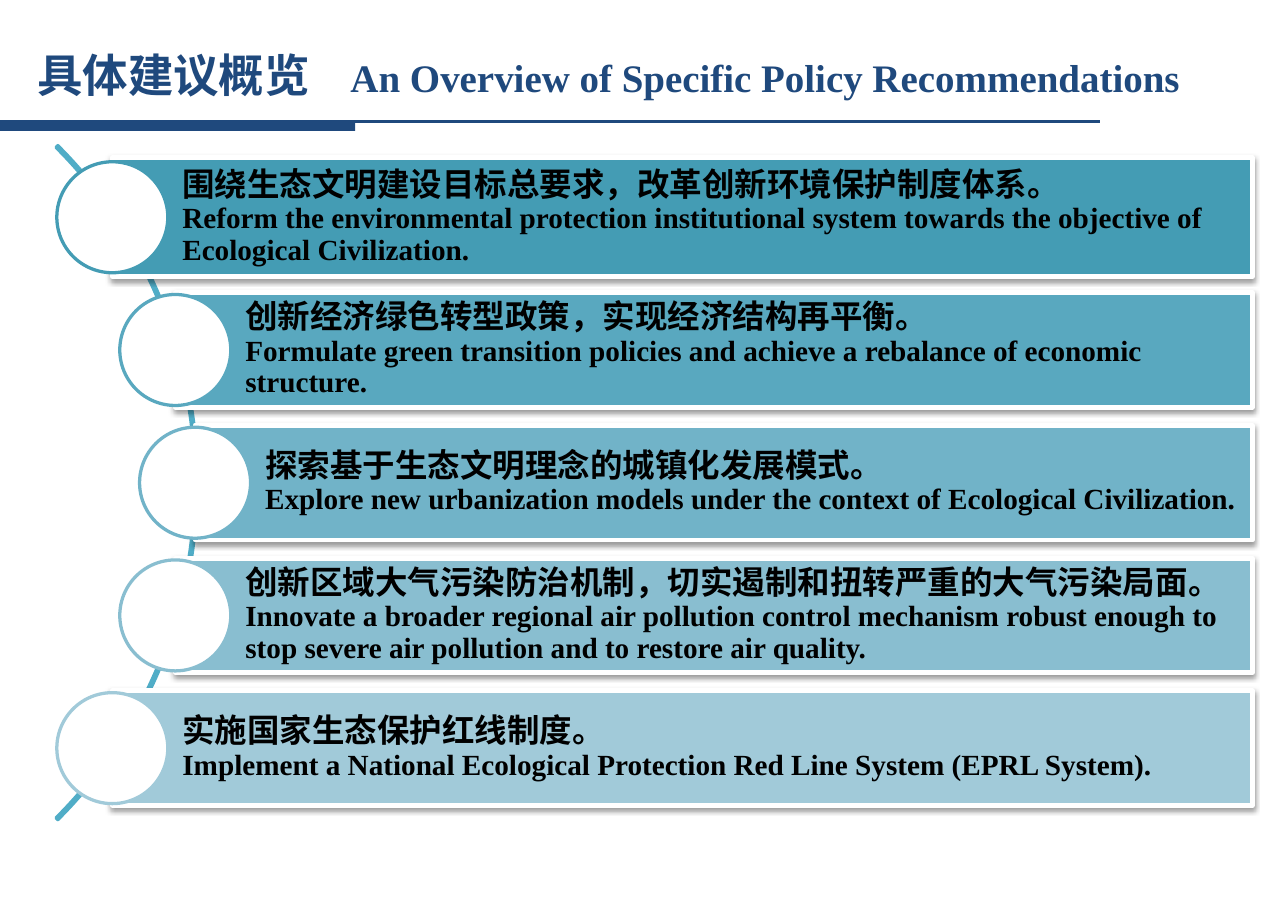
import pptx
import pptx.util
import pptx.dml.color
import pptx.enum.shapes
import pptx.enum.text
import pptx.oxml
import pptx.oxml.ns
from lxml import etree

Pt = pptx.util.Pt
SHAPE = pptx.enum.shapes.MSO_SHAPE
NAVY, TEAL, WHITE, BLACK = "1F497D", "50ADC7", "FFFFFF", "000000"
CJK, SERIF = "Noto Sans CJK SC", "Times New Roman"

RECOMMENDATIONS = [
    (33.9, 73.4, "449CB4", "围绕生态文明建设目标总要求，改革创新环境保护制度体系。",
     "Reform the environmental protection institutional system towards the objective of Ecological Civilization."),
    (72.7, 70.6, "59A8BF", "创新经济绿色转型政策，实现经济结构再平衡。",
     "Formulate green transition policies and achieve a rebalance of economic structure."),
    (84.9, 70.6, "71B3C8", "探索基于生态文明理念的城镇化发展模式。",
     "Explore new urbanization models under the context of Ecological Civilization."),
    (72.7, 70.6, "89BED0", "创新区域大气污染防治机制，切实遏制和扭转严重的大气污染局面。",
     "Innovate a broader regional air pollution control mechanism robust enough to "
     "stop severe air pollution and to restore air quality."),
    (33.9, 70.6, "A1CAD9", "实施国家生态保护红线制度。",
     "Implement a National Ecological Protection Red Line System (EPRL System)."),
]


def rgb(value):
    return pptx.dml.color.RGBColor.from_string(value)


def apply(target, values):
    for name, value in values.items():
        setattr(target, name, value)


def sub(parent, tag, **attrs):
    return etree.SubElement(parent, pptx.oxml.ns.qn(tag), attrs)


def add_run(p, text, size, color, font):
    r = p.add_run()
    r.text = text
    apply(r.font, {"size": Pt(size), "bold": True, "name": font})
    r.font.color.rgb = rgb(color)
    sub(r.font._element, "a:ea", typeface=CJK)


def set_frame(tf, left, top, right, bottom):
    apply(tf, {
        "word_wrap": True, "auto_size": pptx.enum.text.MSO_AUTO_SIZE.NONE,
        "vertical_anchor": pptx.enum.text.MSO_ANCHOR.MIDDLE,
        "margin_left": Pt(left), "margin_top": Pt(top),
        "margin_right": Pt(right), "margin_bottom": Pt(bottom),
    })
    p = tf.paragraphs[0]
    p.alignment = pptx.enum.text.PP_ALIGN.LEFT
    return p


def add_shape(s, kind, x, y, w, h, fill=None, line=None, width=0):
    sp = s.shapes.add_shape(kind, Pt(x), Pt(y), Pt(w), Pt(h))
    sp.shadow.inherit = False
    if fill:
        sp.fill.solid()
        sp.fill.fore_color.rgb = rgb(fill)
    else:
        sp.fill.background()
    if line:
        sp.line.color.rgb = rgb(line)
        sp.line.width = Pt(width)
    else:
        sp.line.fill.background()
    return sp


def add_shadow(sp):
    effects = sp._element.spPr.find(pptx.oxml.ns.qn("a:effectLst"))
    shadow = sub(effects, "a:outerShdw", blurRad="40000", dist="20000",
                 dir="5400000", rotWithShape="0")
    color = sub(shadow, "a:srgbClr", val=BLACK)
    sub(color, "a:alpha", val="38000")


def header(s, x, y, w, h):
    title = s.shapes.title
    apply(title, {"left": Pt(x + 15.8), "top": Pt(y), "width": Pt(w), "height": Pt(46.8)})
    p = set_frame(title.text_frame, 7.2, 3.6, 7.2, 3.6)
    tabs = sub(p._p.get_or_add_pPr(), "a:tabLst")
    sub(tabs, "a:tab", pos=str(Pt(193)), algn="l")
    add_run(p, "具体建议概览\t", 28, NAVY, CJK)
    add_run(p, "An Overview of Specific Policy Recommendations", 24, NAVY, SERIF)

    rule_y = y + h
    rule = s.shapes.add_connector(pptx.enum.shapes.MSO_CONNECTOR.STRAIGHT,
                                  Pt(x), Pt(rule_y), Pt(x + 678.2), Pt(rule_y))
    rule.line.color.rgb = rgb(NAVY)
    rule.line.width = Pt(1.5)
    sub(rule._element.spPr, "a:effectLst")
    add_shape(s, SHAPE.RECTANGLE, x, rule_y, 218.9, 5.8, NAVY)


def recommendation_list(s, x, y, w, h):
    middle, pitch, dot, ring = y + h / 2, 81.8, 68.4, 587.5
    arc = add_shape(s, SHAPE.BLOCK_ARC, x - 501.1, middle - ring / 2, ring, ring, None, TEAL, 2)
    for i, value in enumerate((189, 27, 0.0027)):
        arc.adjustments[i] = value

    for i, (indent, height, color, chinese, english) in enumerate(RECOMMENDATIONS):
        cy = middle + (i - (len(RECOMMENDATIONS) - 1) / 2) * pitch
        bar = add_shape(s, SHAPE.RECTANGLE, x + indent, cy - height / 2,
                        w - indent, height, color, WHITE, 3)
        add_shadow(bar)
        p = set_frame(bar.text_frame, 43.2, 4.3, 4.3, 4.3)
        p.line_spacing = 0.9
        add_run(p, chinese, 20, BLACK, SERIF)
        p.add_line_break()
        add_run(p, english, 18, BLACK, SERIF)
        add_shape(s, SHAPE.OVAL, x + indent - dot / 2, cy - dot / 2, dot, dot, WHITE, color, 2)


def main():
    prs = pptx.Presentation()
    apply(prs, {"slide_width": Pt(793.75), "slide_height": Pt(567)})
    s = prs.slides.add_slide(prs.slide_layouts[5])
    header(s, 0, 22.3, 837.4, 52.6)
    recommendation_list(s, 35.3, 97.5, 736.5, 400)
    prs.save("out.pptx")


if __name__ == "__main__":
    main()
